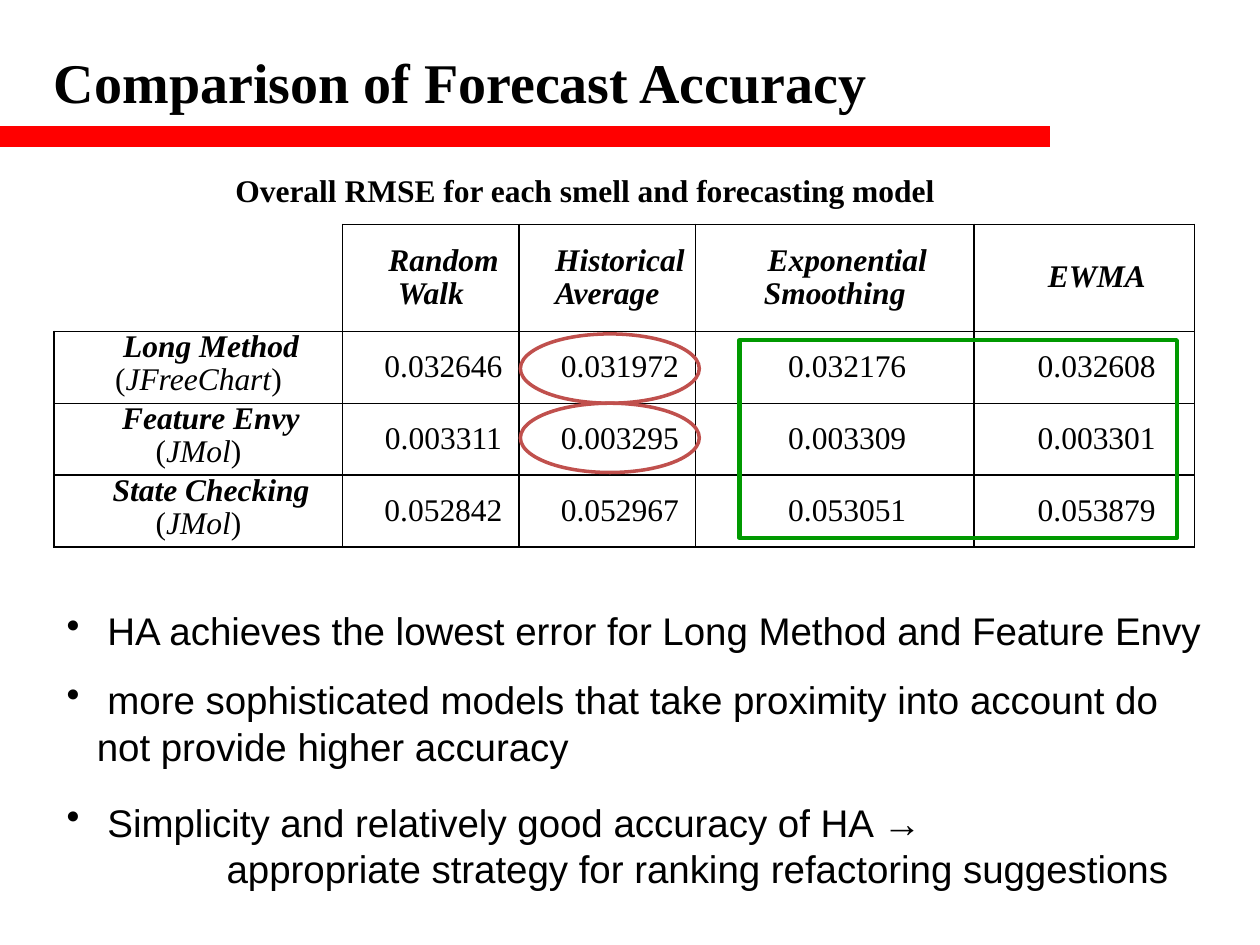
from dataclasses import dataclass

from lxml.etree import SubElement
from pptx import Presentation
from pptx.dml.color import RGBColor
from pptx.enum.shapes import MSO_CONNECTOR, MSO_SHAPE
from pptx.enum.text import MSO_ANCHOR, MSO_AUTO_SIZE, PP_ALIGN
from pptx.oxml import parse_xml
from pptx.oxml.ns import nsdecls, qn
from pptx.util import Emu, Pt

EMU_PER_PX = 9144


@dataclass(frozen=True)
class Theme:
    black: str = "000000"
    red: str = "FF0000"
    crimson: str = "C0504D"
    green: str = "009900"
    serif: str = "Times New Roman"
    sans: str = "Arial"
    title_size: int = 32
    table_size: int = 18
    bullet_size: int = 22


@dataclass(frozen=True)
class Box:
    left: int
    top: int
    width: int
    height: int


@dataclass(frozen=True)
class Bullet:
    box: Box
    text: str


@dataclass(frozen=True)
class Outline:
    kind: MSO_SHAPE
    box: Box
    color: str
    points: float


@dataclass(frozen=True)
class SmellRow:
    smell: str
    project: str
    errors: tuple[str, ...]


THEME = Theme()
COLUMN_WIDTHS = (229, 140, 140, 221, 175)
ROW_HEIGHTS = (85, 57, 57, 57)
MODELS = ("Random Walk", "Historical Average", "Exponential Smoothing", "EWMA")
SMELL_ROWS = (
    SmellRow("Long Method", "JFreeChart", ("0.032646", "0.031972", "0.032176", "0.032608")),
    SmellRow("Feature Envy", "JMol", ("0.003311", "0.003295", "0.003309", "0.003301")),
    SmellRow("State Checking", "JMol", ("0.052842", "0.052967", "0.053051", "0.053879")),
)
BULLETS = (
    Bullet(Box(43, 477, 921, 47), " HA achieves the lowest error for Long Method and Feature Envy"),
    Bullet(
        Box(43, 532, 921, 84),
        " more sophisticated models that take proximity into account do not provide higher accuracy",
    ),
    Bullet(Box(43, 629, 921, 84), " Simplicity and relatively good accuracy of HA "),
)
OUTLINES = (
    Outline(MSO_SHAPE.OVAL, Box(413, 265, 142, 55), THEME.crimson, 2),
    Outline(MSO_SHAPE.OVAL, Box(413, 320, 142, 55), THEME.crimson, 2),
    Outline(MSO_SHAPE.RECTANGLE, Box(587, 270, 347, 157), THEME.green, 2.5),
)


def px(length: int) -> Emu:
    return Emu(length * EMU_PER_PX)


def place(box: Box) -> tuple[Emu, ...]:
    return px(box.left), px(box.top), px(box.width), px(box.height)


def format_span(span, font: str, size: int, bold: bool = False, italic: bool = False) -> None:
    span.font.name = font
    span.font.size = Pt(size)
    span.font.bold = bold
    span.font.italic = italic
    span.font.color.rgb = RGBColor.from_string(THEME.black)


def add_span(para, text: str, font: str, size: int, bold: bool = False, italic: bool = False) -> None:
    span = para.add_run()
    span.text = text
    format_span(span, font, size, bold, italic)


def indent(para, margin: int, first_line: int) -> None:
    properties = para._p.get_or_add_pPr()
    properties.set("marL", str(px(margin)))
    properties.set("indent", str(px(first_line)))


def add_text(slide, box: Box, text: str, font: str, size: int, bold: bool = False):
    frame = slide.shapes.add_textbox(*place(box)).text_frame
    frame.word_wrap = True
    frame.auto_size = MSO_AUTO_SIZE.SHAPE_TO_FIT_TEXT
    frame.text = text
    format_span(frame.paragraphs[0].runs[0], font, size, bold)
    return frame


def add_bullet(slide, bullet: Bullet):
    frame = add_text(slide, bullet.box, bullet.text, THEME.sans, THEME.bullet_size)
    para = frame.paragraphs[0]
    indent(para, 24, -24)
    SubElement(para._p.get_or_add_pPr(), qn("a:buChar"), char="•")
    return frame


def add_outline(slide, outline: Outline) -> None:
    shape = slide.shapes.add_shape(outline.kind, *place(outline.box))
    shape.shadow.inherit = False
    shape.fill.background()
    shape.line.color.rgb = RGBColor.from_string(outline.color)
    shape.line.width = Pt(outline.points)


def add_title_rule(slide) -> None:
    rule = slide.shapes.add_connector(MSO_CONNECTOR.STRAIGHT, px(0), px(108), px(833), px(108))
    rule.line.color.rgb = RGBColor.from_string(THEME.red)
    rule.line.width = Pt(12)
    SubElement(rule._element.spPr, qn("a:effectLst"))


def set_borders(cell, sides: str) -> None:
    properties = cell._tc.get_or_add_tcPr()
    for position, side in enumerate("LRTB"):
        paint = f'<a:solidFill><a:srgbClr val="{THEME.black}"/></a:solidFill>' if side in sides else "<a:noFill/>"
        border = parse_xml(f'<a:ln{side} {nsdecls("a")} w="{Pt(1)}">{paint}</a:ln{side}>')
        properties.insert(position, border)


def prepare_cell(cell, side_margin: int, sides: str = "LRTB", anchor=MSO_ANCHOR.MIDDLE):
    cell.fill.background()
    set_borders(cell, sides)
    cell.vertical_anchor = anchor
    cell.margin_left = cell.margin_right = px(side_margin)
    cell.margin_top = cell.margin_bottom = px(0)
    para = cell.text_frame.paragraphs[0]
    para.alignment = PP_ALIGN.CENTER
    para.line_spacing = 0.95
    indent(para, 0, 20)
    return para


def add_error_table(slide) -> None:
    box = Box(43, 178, sum(COLUMN_WIDTHS), sum(ROW_HEIGHTS))
    table = slide.shapes.add_table(len(ROW_HEIGHTS), len(COLUMN_WIDTHS), *place(box)).table
    table.first_row = table.horz_banding = False
    for column, width in zip(table.columns, COLUMN_WIDTHS):
        column.width = px(width)
    for row, height in zip(table.rows, ROW_HEIGHTS):
        row.height = px(height)
    font, size = THEME.serif, THEME.table_size
    prepare_cell(table.cell(0, 0), 7, "RB")
    for column, model in enumerate(MODELS, 1):
        add_span(prepare_cell(table.cell(0, column), 7), model, font, size, True, True)
    for row, entry in enumerate(SMELL_ROWS, 1):
        para = prepare_cell(table.cell(row, 0), 4, anchor=MSO_ANCHOR.TOP)
        add_span(para, f"{entry.smell} ", font, size, True, True)
        add_span(para, "(", font, size)
        add_span(para, entry.project, font, size, italic=True)
        add_span(para, ")", font, size)
        for column, error in enumerate(entry.errors, 1):
            add_span(prepare_cell(table.cell(row, column), 4), error, font, size)


def main() -> None:
    deck = Presentation()
    deck.slide_width, deck.slide_height = px(1000), px(750)
    page = deck.slides.add_slide(deck.slide_layouts[6])
    add_title_rule(page)
    title = add_text(
        page, Box(33, 33, 719, 64), "Comparison of Forecast Accuracy", THEME.serif, THEME.title_size, True
    )
    title.paragraphs[0].space_before = Pt(4)
    add_error_table(page)
    caption = "Overall RMSE for each smell and forecasting model"
    add_text(page, Box(177, 131, 730, 40), caption, THEME.serif, THEME.table_size, True)
    frames = [add_bullet(page, bullet) for bullet in BULLETS]
    conclusion = frames[-1]
    add_span(conclusion.paragraphs[0], "→", THEME.sans, THEME.bullet_size, True)
    para = conclusion.add_paragraph()
    para.text = "appropriate strategy for ranking refactoring suggestions"
    format_span(para.runs[0], THEME.sans, THEME.bullet_size)
    indent(para, 127, 0)
    for outline in OUTLINES:
        add_outline(page, outline)
    deck.save("out.pptx")


if __name__ == "__main__":
    main()
